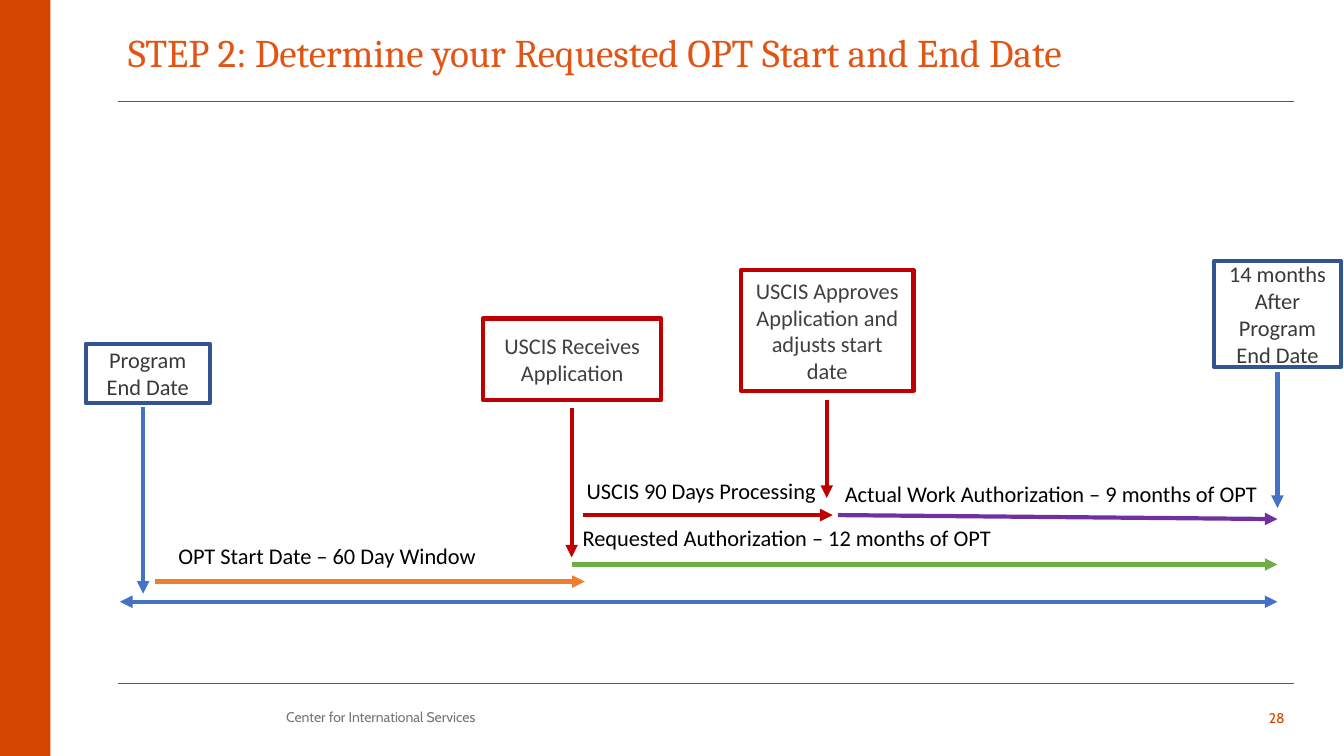
from collections import namedtuple
from dataclasses import dataclass

from lxml.etree import SubElement as Sub
from pptx import Presentation
from pptx.dml.color import RGBColor as Rgb
from pptx.enum.shapes import MSO_CONNECTOR as Link, MSO_SHAPE as Shape
from pptx.enum.text import MSO_ANCHOR as Anchor, MSO_AUTO_SIZE as Fit, PP_ALIGN as Align
from pptx.oxml.ns import qn
from pptx.util import Inches, Pt

Box = namedtuple("Box", "left top width height")


@dataclass(frozen=True)
class Theme:
    band: str = "D44500"
    title: str = "E25414"
    rule: str = "595959"
    foot: str = "6F777D"
    blue: str = "4472C4"
    navy: str = "325491"
    red: str = "C00000"
    orange: str = "ED7D31"
    green: str = "70AD47"
    purple: str = "7030A0"
    slate: str = "3B3838"
    gray: str = "404040"
    black: str = "000000"
    head: tuple = ("Cambria", 28)
    body: tuple = ("Calibri", 16)
    small: tuple = ("Cabin", 10)
    stroke: float = 3


THEME = Theme()


def apply(item, values):
    for name, value in values.items():
        setattr(item, name, value)


def place(item, box):
    apply(item, {name: Inches(size) for name, size in box._asdict().items()})


def write(shape, lines, face, color, align=Align.LEFT, anchor=Anchor.TOP,
          spacing=None, fit=Fit.NONE):
    frame = shape.text_frame
    frame.text = "\n".join(lines)
    apply(frame, dict(word_wrap=True, vertical_anchor=anchor, auto_size=fit))
    for para in frame.paragraphs:
        apply(para, dict(alignment=align, line_spacing=spacing))
        for run in para.runs:
            apply(run.font, dict(name=face[0], size=Pt(face[1])))
            run.font.color.rgb = Rgb.from_string(color)


def label(slide, box, text, face, color, **style):
    item = slide.shapes.add_textbox(*map(Inches, box))
    write(item, [text], face, color, **style)


def line(slide, start, end, color, width, heads=()):
    """Draw a line; heads may name headEnd and tailEnd, in that order."""
    item = slide.shapes.add_connector(Link.STRAIGHT, *map(Inches, start + end))
    item.line.color.rgb = Rgb.from_string(color)
    item.line.width = Pt(width)
    edge = item.line._get_or_add_ln()
    for head in heads:
        Sub(edge, qn("a:" + head), type="triangle")
    Sub(item._element.spPr, qn("a:effectLst"))


def arrow(slide, start, end, color, heads=("tailEnd",)):
    line(slide, start, end, color, THEME.stroke, heads)


def panel(slide, box, fill=None, edge=None):
    item = slide.shapes.add_shape(Shape.RECTANGLE, *map(Inches, box))
    item.shadow.inherit = False
    if fill:
        item.fill.solid()
        item.fill.fore_color.rgb = Rgb.from_string(fill)
    else:
        item.fill.background()
    if edge:
        item.line.color.rgb = Rgb.from_string(edge)
        item.line.width = Pt(THEME.stroke)
    else:
        item.line.fill.background()
    return item


def frame(slide, box):
    """Side band, title, rules and footer."""
    panel(slide, Box(0, 0, 0.5, 7.5), fill=THEME.band)
    right = box.left + box.width
    for y in (box.top, box.top + box.height):
        line(slide, (box.left, y), (right, y), THEME.rule, 0.5)
    title = slide.shapes.title
    place(title, Box(box.left, box.top - 0.73, box.width, 0.69))
    write(title, ["STEP 2: Determine your Requested OPT Start and End Date"],
          THEME.head, THEME.title, spacing=0.9)
    foot = box.top + box.height + 0.14
    label(slide, Box(box.left + 1.57, foot + 0.01, 9.43, 0.39),
          "Center for International Services", THEME.small, THEME.foot,
          anchor=Anchor.MIDDLE, spacing=0.9)
    label(slide, Box(right - 0.66, foot, 0.67, 0.4), "28", THEME.small,
          THEME.band, align=Align.RIGHT, anchor=Anchor.MIDDLE)


def timeline(slide, box):
    """Place events and spans by distance along and height above the axis."""
    base = box.top + box.height

    def at(x, rise):
        return box.left + x, base - rise

    arrow(slide, at(0, 0), at(box.width, 0), THEME.blue, ("headEnd", "tailEnd"))

    navy = (THEME.navy, THEME.blue, THEME.slate)
    red = (THEME.red, THEME.red, THEME.gray)
    events = [
        # lines, left, rise, width, height, arrow x, arrow rises, colours
        (["Program End Date"], -0.34, 2.56, 1.23, 0.59, 0.23, (1.93, 0.08), navy),
        (["USCIS Receives Application"], 3.6, 2.81, 1.77, 0.81, 4.48, (1.92, 0.44), red),
        (["USCIS Approves Application and adjusts start date"],
         6.16, 3.29, 1.71, 1.2, 7.01, (2, 1.03), red),
        (["14 months After", "Program End Date"],
         10.85, 3.38, 1.26, 1.05, 11.48, (2.28, 0.93), navy),
    ]
    for lines, left, rise, width, height, x, (high, low), (edge, stem, ink) in events:
        arrow(slide, at(x, high), at(x, low), stem)
        card = panel(slide, Box(*at(left, rise), width, height), edge=edge)
        write(card, lines, THEME.body, ink, Align.CENTER, Anchor.MIDDLE)

    spans = [
        # text, left, rise, width, arrow start, arrow end, colour
        ("OPT Start Date – 60 Day Window", 0.48, 0.64, 4,
         (0.35, 0.2), (4.61, 0.2), THEME.orange),
        ("Requested Authorization – 12 months of OPT", 4.49, 0.82, 5.82,
         (4.48, 0.37), (11.48, 0.37), THEME.green),
        ("USCIS 90 Days Processing", 4.53, 1.29, 2.58,
         (4.59, 0.86), (7.07, 0.86), THEME.red),
        ("Actual Work Authorization – 9 months of OPT", 7.09, 1.26, 4.41,
         (7.12, 0.86), (11.48, 0.82), THEME.purple),
    ]
    for text, left, rise, width, start, end, color in spans:
        arrow(slide, at(*start), at(*end), color)
        label(slide, Box(*at(left, rise), width, 0.37), text, THEME.body,
              THEME.black, fit=Fit.SHAPE_TO_FIT_TEXT)


def main():
    deck = Presentation()
    apply(deck, dict(slide_width=Inches(13.33), slide_height=Inches(7.5)))
    slide = deck.slides.add_slide(deck.slide_layouts[5])
    frame(slide, Box(1.17, 1.01, 11.66, 5.77))
    timeline(slide, Box(1.19, 2.59, 11.48, 3.38))
    deck.save("out.pptx")


if __name__ == "__main__":
    main()
